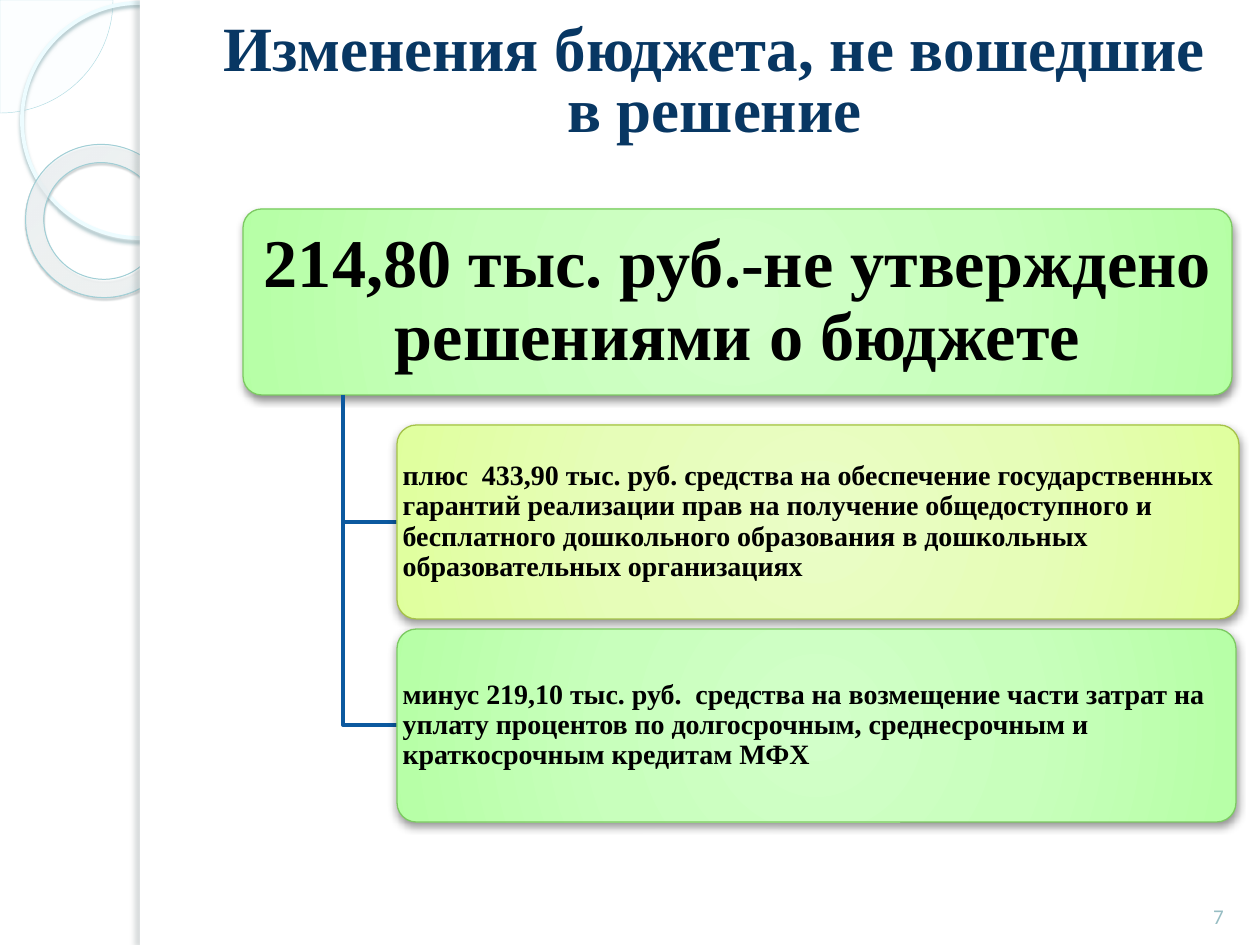
from pptx import Presentation
from pptx.dml.color import RGBColor
from pptx.enum.shapes import MSO_SHAPE
from pptx.enum.text import MSO_ANCHOR, MSO_AUTO_SIZE, PP_ALIGN
from pptx.oxml.ns import qn
from pptx.oxml.xmlchemy import OxmlElement
from pptx.util import Pt

SCALE = 914400 / 126
SERIF = "Times New Roman"
GREEN = [(0, "D2FFC9", 100), (50, "C8FFBC", 100), (97, "B7FFA7", 100), (100, "B3FFA1", 100)]
LIME = [(0, "EAFDC6", 100), (50, "E6FDB8", 100), (97, "E0FF9F", 100), (100, "DEFF98", 100)]
GLASS = [(0, "F9FEFF", 70), (70, "FDFFFF", 55), (100, "9EF2FF", 60)]
CENTRE = (50, 50, 50, 50)
CARD_SHADOW = ("000000", 43, 5, 2, 90)


def px(value):
    """Turn px into EMU."""
    return round(value * SCALE)


def rgb(code):
    """Turn a hex string into a colour."""
    return RGBColor.from_string(code)


def add_child(parent, tag, **attributes):
    """Append an XML child with the given attributes."""
    child = OxmlElement(tag)
    for name, value in attributes.items():
        child.set(name, str(value))
    parent.append(child)
    return child


def add_colour(parent, code, opacity):
    """Append a colour of the given opacity in percent."""
    colour = add_child(parent, "a:srgbClr", val=code)
    add_child(colour, "a:alpha", val=opacity * 1000)


def set_gradient(shape, stops, focus):
    """Fill a shape with a circular gradient around a focus rectangle."""
    gradient = OxmlElement("a:gradFill")
    stop_list = add_child(gradient, "a:gsLst")
    for position, code, opacity in stops:
        add_colour(add_child(stop_list, "a:gs", pos=position * 1000), code, opacity)
    circle = add_child(gradient, "a:path", path="circle")
    sides = {side: value * 1000 for side, value in zip("ltrb", focus)}
    add_child(circle, "a:fillToRect", **sides)
    shape.element.spPr.find(qn("a:prstGeom")).addnext(gradient)


def set_shadow(shape, code, opacity, blur, distance, angle):
    """Give a shape an outer shadow."""
    effects = shape.element.spPr.find(qn("a:effectLst"))
    shadow = add_child(effects, "a:outerShdw", blurRad=Pt(blur), dist=Pt(distance),
                       dir=angle * 60000, algn="ctr", rotWithShape=0)
    add_colour(shadow, code, opacity)


def set_line(shape, line):
    """Draw an outline from a colour and a width, or none."""
    if line:
        shape.line.color.rgb = rgb(line[0])
        shape.line.width = Pt(line[1])
    else:
        shape.line.fill.background()


def add_shape(slide, kind, box, line=None, shadow=None, adjustments=()):
    """Add a preset shape with its outline and shadow."""
    shape = slide.shapes.add_shape(kind, *map(px, box))
    for index, value in enumerate(adjustments):
        shape.adjustments[index] = value
    set_line(shape, line)
    shape.shadow.inherit = False
    if shadow:
        set_shadow(shape, *shadow)
    return shape


def set_text(shape, text, size, colour, font=SERIF, bold=True, align=PP_ALIGN.CENTER,
             anchor=MSO_ANCHOR.MIDDLE, spacing=None):
    """Write one formatted paragraph into a shape."""
    frame = shape.text_frame
    frame.word_wrap = True
    frame.auto_size = MSO_AUTO_SIZE.NONE
    frame.vertical_anchor = anchor
    frame.text = text
    paragraph = frame.paragraphs[0]
    paragraph.alignment = align
    paragraph.line_spacing = spacing
    paragraph.font.name = font
    paragraph.font.size = Pt(size)
    paragraph.font.bold = bold
    paragraph.font.color.rgb = rgb(colour)


def add_card(slide, box, stops, border, text, size, align, margin):
    """Add a rounded card with a gradient and text."""
    card = add_shape(slide, MSO_SHAPE.ROUNDED_RECTANGLE, box, (border, 0.75),
                     CARD_SHADOW, [0.1])
    set_gradient(card, stops, CENTRE)
    frame = card.text_frame
    frame.margin_left = frame.margin_right = px(margin)
    frame.margin_top = frame.margin_bottom = 0
    set_text(card, text, size, "000000", align=align, spacing=0.9)


def add_branch(slide, left, top, right, bottom):
    """Add a line going down and then right to a card."""
    builder = slide.shapes.build_freeform(left, top, SCALE)
    builder.add_line_segments([(left, bottom), (right, bottom)], close=False)
    branch = builder.convert_to_shape()
    branch.fill.background()
    set_line(branch, ("0C599F", 2))
    branch.shadow.inherit = False


def add_decoration(slide):
    """Draw the rings at the left and the white panel over them."""
    pie = add_shape(slide, MSO_SHAPE.PIE, (-113, -113, 226, 226), ("AFDBE2", 0.25),
                    adjustments=[0, 54])
    pie.fill.solid()
    pie.fill.fore_color.rgb = rgb("F8FEFF")
    add_child(pie.element.spPr.find(qn("a:solidFill"))[0], "a:alpha", val=33000)
    ring = add_shape(slide, MSO_SHAPE.OVAL, (22, 3, 235, 235), ("EDFCFF", 2.15),
                     ("9CB9BE", 85, 2, 2, 90))
    ring.fill.background()
    donut = add_shape(slide, MSO_SHAPE.DONUT, (25, 145, 155, 152), ("A1CFD6", 0.58),
                      ("4B5E61", 35, 1, 1.2, 75), [0.12])
    donut.rotation = 38.6
    set_gradient(donut, GLASS, (-408, -50, 508, 150))
    for width, shadow in ((1120, None), (10, ("6C7A7C", 25, 3, 3, 180))):
        panel = add_shape(slide, MSO_SHAPE.RECTANGLE, (140, 0, width, 945), shadow=shadow)
        panel.fill.solid()
        panel.fill.fore_color.rgb = rgb("FFFFFF")


def add_title(slide, text):
    """Place the title in front of the panel."""
    title = slide.shapes.title
    title.left, title.top, title.width, title.height = map(px, (198, 42, 1033, 84))
    set_text(title, text, 36, "083763", spacing=Pt(35))
    slide.shapes.element.append(title.element)


def main():
    """Build the slide and save it."""
    presentation = Presentation()
    presentation.slide_width, presentation.slide_height = px(1260), px(945)
    slide = presentation.slides.add_slide(presentation.slide_layouts[5])
    add_decoration(slide)
    add_title(slide, "Изменения бюджета, не вошедшие в решение")
    add_card(slide, (243, 209, 989, 186), GREEN, "7CCA62",
             "214,80 тыс. руб.-не утверждено решениями о бюджете", 39, PP_ALIGN.CENTER, 5)
    changes = [
        ((397, 425, 842, 194), LIME, "A5C249",
         "плюс  433,90 тыс. руб. средства на обеспечение государственных гарантий "
         "реализации прав на получение общедоступного и бесплатного дошкольного "
         "образования в дошкольных образовательных организациях"),
        ((397, 629, 839, 193), GREEN, "7CCA62",
         "минус 219,10 тыс. руб.  средства на возмещение части затрат на уплату процентов "
         "по долгосрочным, среднесрочным и краткосрочным кредитам МФХ"),
    ]
    for box, stops, border, text in changes:
        left, top, _, height = box
        add_branch(slide, 343, 395, left, top + height // 2)
        add_card(slide, box, stops, border, text, 16, PP_ALIGN.LEFT, 0)
    number = slide.shapes.add_textbox(*map(px, (1187, 869, 63, 66)))
    set_text(number, "7", 12, "97BDC3", "Calibri", False, anchor=MSO_ANCHOR.BOTTOM)
    presentation.save("out.pptx")


if __name__ == "__main__":
    main()
